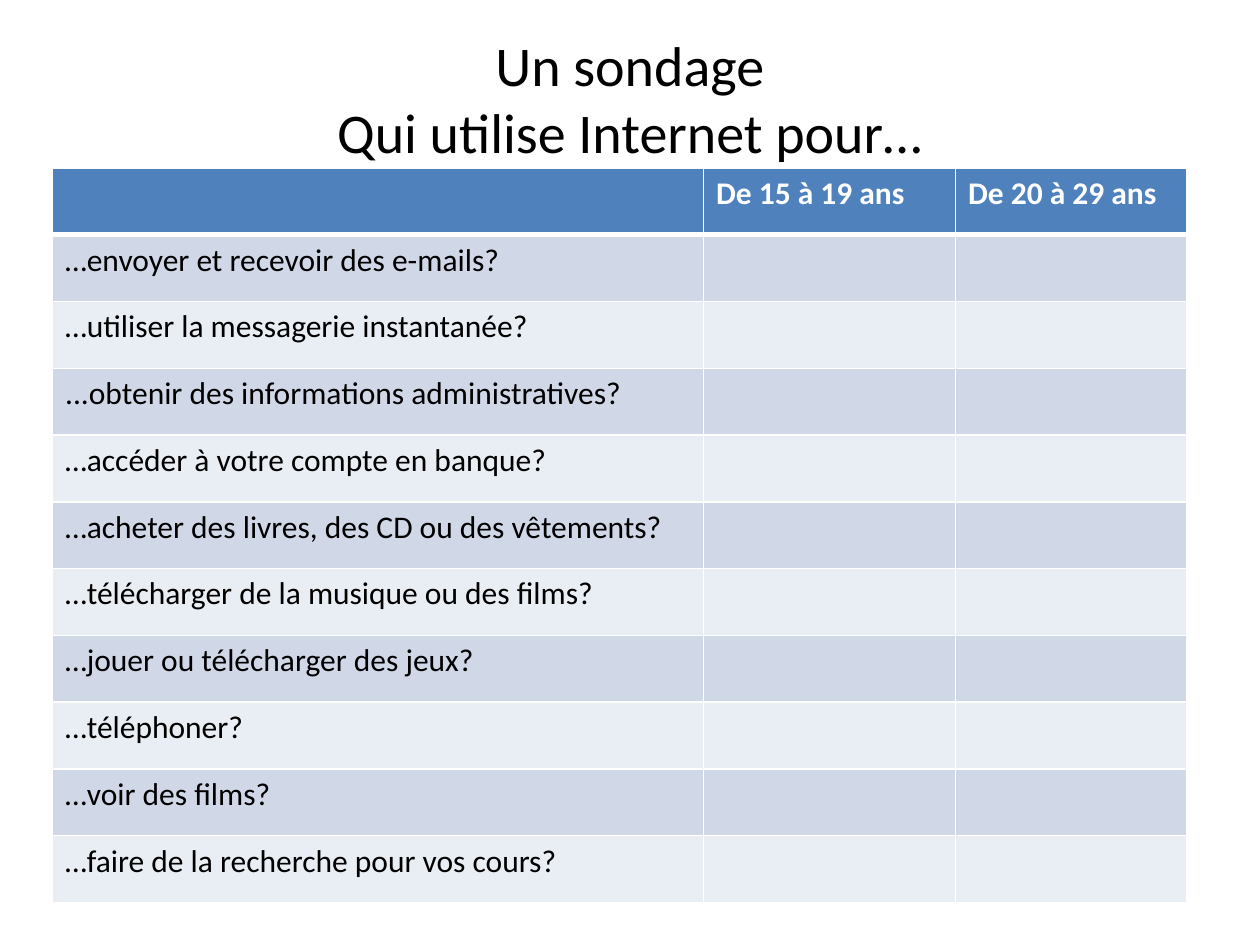
"""Build a survey slide: a title above a table of Internet uses by age group."""
from lxml.etree import SubElement as Sub
from pptx import Presentation
from pptx.dml.color import RGBColor as RGB
from pptx.enum.text import MSO_ANCHOR as Anchor, PP_ALIGN as Align
from pptx.oxml.ns import qn
from pptx.util import Pt


def write(para, text, size, color, bold=False):
    run = para.add_run()
    run.text = text
    font = run.font
    font.name, font.size, font.bold = "Calibri", Pt(size), bold
    font.color.rgb = RGB.from_string(color)


def edge(cell, side, width):
    line = Sub(cell._tc.get_or_add_tcPr(), qn("a:ln" + side), w=str(Pt(width)))
    fill = Sub(line, qn("a:solidFill"))
    Sub(fill, qn("a:srgbClr"), val="FFFFFF")


deck = Presentation()
deck.slide_width, deck.slide_height = Pt(720), Pt(540)
slide = deck.slides.add_slide(deck.slide_layouts[5])

title = slide.shapes.title
title.left, title.top, title.width, title.height = Pt(36), Pt(21.6), Pt(648), Pt(68.4)
frame = title.text_frame
frame.vertical_anchor = Anchor.MIDDLE
para = frame.paragraphs[0]
para.alignment = Align.CENTER
write(para, "Un sondage", 32, "000000")
para.add_line_break()
write(para, "Qui utilise Internet pour…", 32, "000000")

heads = ["", "De 15 à 19 ans", "De 20 à 29 ans"]
uses = [
    "…envoyer et recevoir des e-mails?",
    "…utiliser la messagerie instantanée?",
    "...obtenir des informations administratives?",
    "…accéder à votre compte en banque?",
    "…acheter des livres, des CD ou des vêtements?",
    "…télécharger de la musique ou des films?",
    "…jouer ou télécharger des jeux?",
    "…téléphoner?",
    "…voir des films?",
    "…faire de la recherche pour vos cours?",
]
rows = [heads] + [[use, "", ""] for use in uses]
high = 38.18
grid = slide.shapes.add_table(
    len(rows), len(heads), Pt(30), Pt(96), Pt(648), Pt(high * len(rows))).table
for col, wide in zip(grid.columns, [372, 144, 132]):
    col.width = Pt(wide)

for i, row in enumerate(rows):
    grid.rows[i].height = Pt(high)
    head = i == 0
    back = "4F81BD" if head else ["E9EDF4", "D0D8E8"][i % 2]
    for j, text in enumerate(row):
        cell = grid.cell(i, j)
        edge(cell, "L", 1)
        edge(cell, "R", 1)
        edge(cell, "T", 3 if i == 1 else 1)
        edge(cell, "B", 3 if head else 1)
        cell.fill.solid()
        cell.fill.fore_color.rgb = RGB.from_string(back)
        if text:
            ink = "FFFFFF" if head else "000000"
            write(cell.text_frame.paragraphs[0], text, 18, ink, head)

deck.save("out.pptx")
